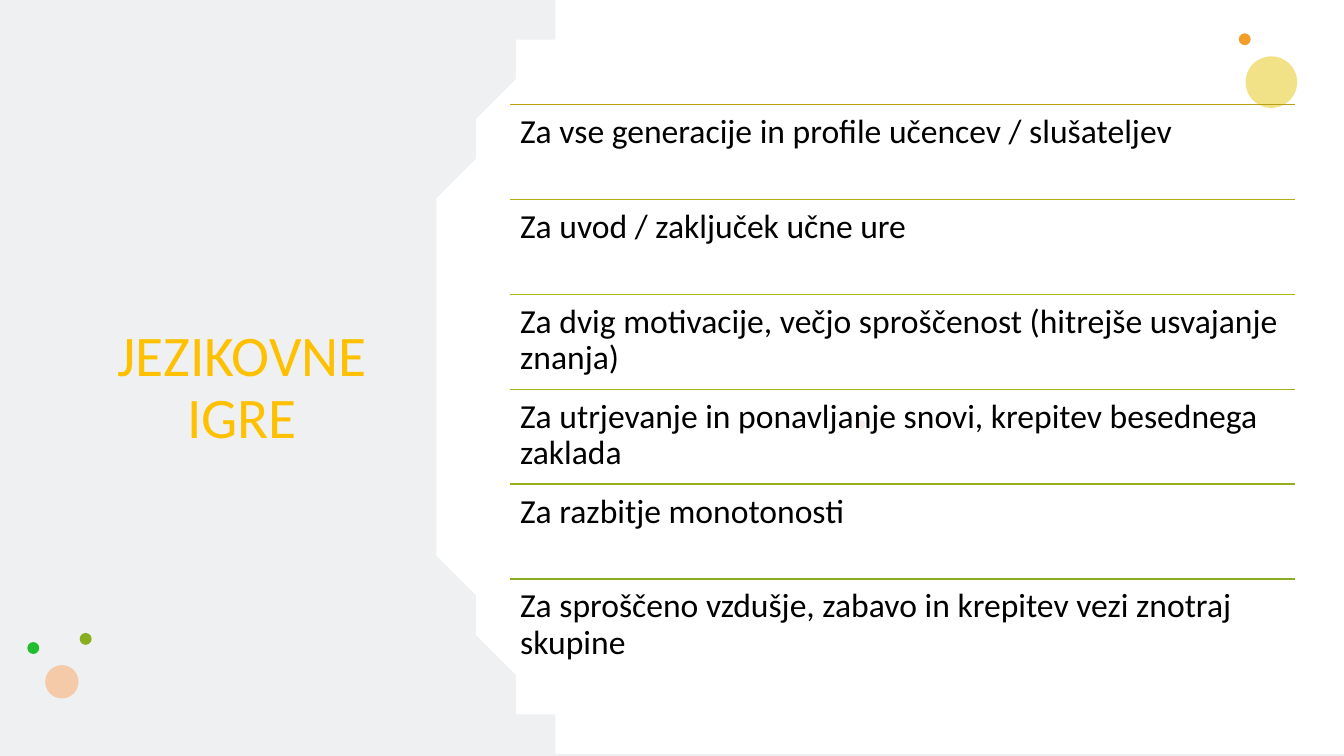
"""Builds the slide about the uses of language games."""
from math import asin, cos, sin

from lxml.etree import SubElement
from pptx import Presentation
from pptx.dml.color import RGBColor
from pptx.enum.shapes import MSO_CONNECTOR as CONNECTOR, MSO_SHAPE as SHAPE
from pptx.enum.text import MSO_ANCHOR as ANCHOR, PP_ALIGN as ALIGN
from pptx.oxml.ns import qn
from pptx.util import Cm, Pt

WIDTH, HEIGHT = 33.87, 19.05
COLORS = {
    "white": "FFFFFF", "grey": "C8CED4", "title": "FFC000", "text": "000000",
    "yellow": "EDD75A", "orange": "F39E29", "pink": "E3BEBE",
    "olive": "88AD1F", "peach": "F5CAA9", "green": "21BC30",
}
DOTS = [
    (31.39, 1.42, 1.3, "yellow", 72),
    (31.22, 0.84, 0.3, "orange", 100),
    (21.56, 10.57, 0.25, "pink", 28),
    (2.01, 15.95, 0.3, "olive", 100),
    (1.14, 16.76, 0.84, "peach", 100),
    (0.69, 16.18, 0.3, "green", 100),
]
USES = [
    ("Za vse generacije in profile učencev / slušateljev", "B9A014"),
    ("Za uvod / zaključek učne ure", "B7AC16"),
    ("Za dvig motivacije, večjo sproščenost (hitrejše usvajanje znanja)", "B2B418"),
    ("Za utrjevanje in ponavljanje snovi, krepitev besednega zaklada", "A3B21B"),
    ("Za razbitje monotonosti", "95AF1D"),
    ("Za sproščeno vzdušje, zabavo in krepitev vezi znotraj skupine", "88AD1F"),
]
LIST_LEFT, LIST_TOP, LIST_WIDTH, ROW_HEIGHT = 12.86, 2.64, 19.77, 2.39
ARC_CENTER, ARC_RADIUS, ARC_STEPS = 24.12, 13.55, 60


class SlideBuilder:
    """Holds the text style and the slide being drawn."""

    font = "Calibri"
    line_spacing = 0.9

    def __init__(self, slide):
        self.slide = slide
        self.shapes = slide.shapes

    def paint(self, shape, color, opacity=100):
        """Fills a shape without outline or shadow."""
        shape.shadow.inherit = False
        shape.line.fill.background()
        shape.fill.solid()
        shape.fill.fore_color.rgb = RGBColor.from_string(COLORS[color])
        if opacity < 100:
            color_element = shape.fill._xPr.find(qn("a:solidFill"))[0]
            SubElement(color_element, qn("a:alpha")).set("val", str(opacity * 1000))

    def preset(self, kind, left, top, width, height, color, opacity=100):
        """Adds a filled preset shape."""
        shape = self.shapes.add_shape(kind, Cm(left), Cm(top), Cm(width), Cm(height))
        self.paint(shape, color, opacity)

    def outline(self, points, color):
        """Adds a filled closed outline."""
        builder = self.shapes.build_freeform(*points[0], scale=Cm(1))
        builder.add_line_segments(points[1:], close=True)
        self.paint(builder.convert_to_shape(), color)

    def rule(self, left, top, width, color):
        """Adds a horizontal line."""
        line = self.shapes.add_connector(
            CONNECTOR.STRAIGHT, Cm(left), Cm(top), Cm(left + width), Cm(top))
        line.line.color.rgb = RGBColor.from_string(color)
        line.line.width = Pt(1)
        SubElement(line._element.spPr, qn("a:effectLst"))

    def text(self, left, top, width, height, text, size, color,
             align=ALIGN.LEFT, anchor=ANCHOR.TOP):
        """Adds a wrapped text box."""
        frame = self.shapes.add_textbox(
            Cm(left), Cm(top), Cm(width), Cm(height)).text_frame
        frame.word_wrap = True
        frame.vertical_anchor = anchor
        frame.margin_left = frame.margin_right = Cm(0.25)
        frame.margin_top = frame.margin_bottom = Cm(0.25)
        frame.text = text
        paragraph = frame.paragraphs[0]
        paragraph.alignment = align
        paragraph.line_spacing = self.line_spacing
        for run in paragraph.runs:
            run.font.name = self.font
            run.font.size = Pt(size)
            run.font.color.rgb = RGBColor.from_string(COLORS[color])


def main():
    """Draws the slide and saves it."""
    presentation = Presentation()
    presentation.slide_width, presentation.slide_height = Cm(WIDTH), Cm(HEIGHT)
    builder = SlideBuilder(presentation.slides.add_slide(presentation.slide_layouts[6]))

    builder.preset(SHAPE.RECTANGLE, 0, 0, WIDTH, HEIGHT, "grey", 30)
    half_angle = asin(HEIGHT / 2 / ARC_RADIUS)
    angles = [half_angle * (2 * step / ARC_STEPS - 1) for step in range(ARC_STEPS + 1)]
    arc = [(ARC_CENTER - ARC_RADIUS * cos(angle), HEIGHT / 2 + ARC_RADIUS * sin(angle))
           for angle in angles]
    builder.outline(arc + [(WIDTH, HEIGHT), (WIDTH, 0)], "white")

    for left, top, size, color, opacity in DOTS:
        builder.preset(SHAPE.OVAL, left, top, size, size, color, opacity)

    builder.text(2.13, 2.64, 7.95, 14.33, "JEZIKOVNE IGRE", 41, "title",
                 ALIGN.CENTER, ANCHOR.MIDDLE)
    for row, (use, color) in enumerate(USES):
        top = LIST_TOP + row * ROW_HEIGHT
        builder.rule(LIST_LEFT, top, LIST_WIDTH, color)
        builder.text(LIST_LEFT, top, LIST_WIDTH, ROW_HEIGHT, use, 24, "text")

    presentation.save("out.pptx")


if __name__ == "__main__":
    main()
